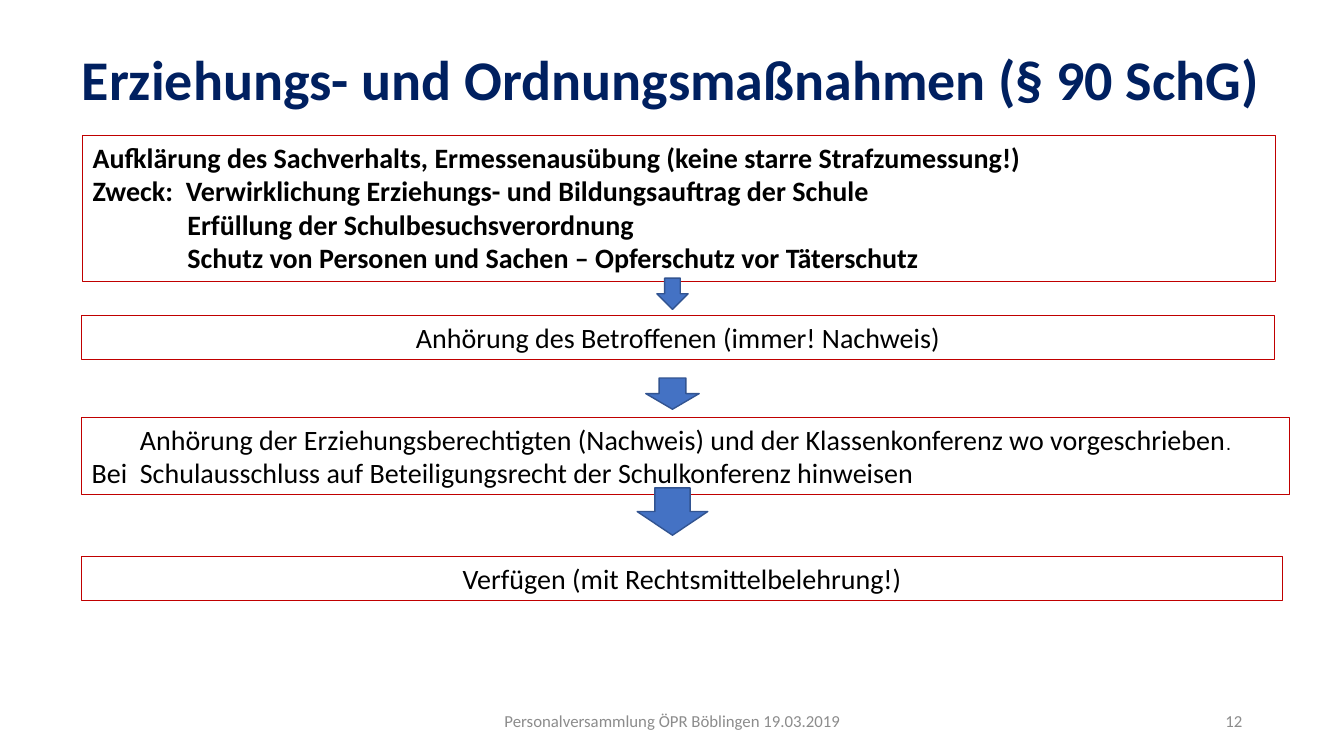
from dataclasses import dataclass

from pptx import Presentation
from pptx.dml.color import RGBColor
from pptx.enum.shapes import MSO_SHAPE
from pptx.enum.text import MSO_ANCHOR, PP_ALIGN
from pptx.slide import Slide
from pptx.util import Inches, Pt

NAVY, RED, BLACK, GRAY = "002060", "C00000", "000000", "8C8C8C"
BLUE, DARK_BLUE = "4472C4", "325491"
ARROW_CENTER = 6.67


@dataclass
class Run:
    text: str
    size: float = 20
    font: str = "Calibri"


@dataclass
class Line:
    runs: list[Run]
    align: PP_ALIGN = PP_ALIGN.LEFT
    indent: float = 0


@dataclass
class Step:
    left: float
    top: float
    width: float
    height: float
    lines: list[Line]
    bold: bool = False


@dataclass
class Arrow:
    top: float
    width: float
    height: float


PURPOSE_INDENT = 0.94
STEPS = [
    Step(0.82, 1.34, 11.83, 1.45, [
        Line([Run("Aufklärung des Sachverhalts, Ermessenausübung (keine starre Strafzumessung!)")]),
        Line([Run("Zweck:  Verwirklichung Erziehungs- und Bildungsauftrag der Schule")]),
        Line([Run("Erfüllung der Schulbesuchsverordnung")], indent=PURPOSE_INDENT),
        Line([Run("Schutz von Personen und Sachen – Opferschutz vor Täterschutz")],
             indent=PURPOSE_INDENT),
    ], bold=True),
    Step(0.81, 3.13, 11.83, 0.44, [
        Line([Run("Anhörung des Betroffenen (immer! Nachweis)")], PP_ALIGN.CENTER),
    ]),
    Step(0.81, 4.14, 11.98, 0.77, [
        Line([Run("Anhörung der Erziehungsberechtigten (Nachweis) und der "
                  "Klassenkonferenz wo vorgeschrieben"),
              Run(".", 14, "Arial")], PP_ALIGN.CENTER),
        Line([Run("Bei  Schulausschluss auf Beteiligungsrecht der Schulkonferenz hinweisen")]),
    ]),
    Step(0.81, 5.52, 11.91, 0.44, [
        Line([Run("Verfügen (mit Rechtsmittelbelehrung!)")], PP_ALIGN.CENTER),
    ]),
]
ARROWS = [Arrow(2.76, 0.31, 0.31), Arrow(3.75, 0.53, 0.31), Arrow(4.84, 0.7, 0.47)]


def rgb(color: str) -> RGBColor:
    return RGBColor.from_string(color)


def add_text(slide: Slide, lines: list[Line], left: float, top: float, width: float,
             height: float, *, color: str = BLACK, bold: bool = False,
             anchor: MSO_ANCHOR = MSO_ANCHOR.TOP, border: str | None = None) -> None:
    box = slide.shapes.add_textbox(Inches(left), Inches(top), Inches(width), Inches(height))
    if border:
        box.line.color.rgb = rgb(border)
        box.line.width = Pt(0.75)
    frame = box.text_frame
    frame.word_wrap = True
    frame.vertical_anchor = anchor
    for index, line in enumerate(lines):
        paragraph = frame.add_paragraph() if index else frame.paragraphs[0]
        paragraph.alignment = line.align
        if line.indent:
            paragraph._p.get_or_add_pPr().set("marL", str(Inches(line.indent)))
        for part in line.runs:
            run = paragraph.add_run()
            run.text = part.text
            run.font.name = part.font
            run.font.size = Pt(part.size)
            run.font.bold = bold
            run.font.color.rgb = rgb(color)


def add_step(slide: Slide, step: Step) -> None:
    add_text(slide, step.lines, step.left, step.top, step.width, step.height,
             bold=step.bold, border=RED)


def add_arrow(slide: Slide, arrow: Arrow) -> None:
    shape = slide.shapes.add_shape(
        MSO_SHAPE.DOWN_ARROW, Inches(ARROW_CENTER - arrow.width / 2), Inches(arrow.top),
        Inches(arrow.width), Inches(arrow.height))
    shape.shadow.inherit = False
    shape.fill.solid()
    shape.fill.fore_color.rgb = rgb(BLUE)
    shape.line.color.rgb = rgb(DARK_BLUE)
    shape.line.width = Pt(1)


def main() -> None:
    deck = Presentation()
    deck.slide_width, deck.slide_height = Inches(13.33), Inches(7.5)
    slide = deck.slides.add_slide(deck.slide_layouts[6])

    title = Run("Erziehungs- und Ordnungsmaßnahmen (§ 90 SchG)", 40)
    add_text(slide, [Line([title], PP_ALIGN.CENTER)], 0.66, 0.39, 11.98, 0.77,
             color=NAVY, bold=True)
    for step in STEPS:
        add_step(slide, step)
    for arrow in ARROWS:
        add_arrow(slide, arrow)

    page_number = Line([Run("12", 12)], PP_ALIGN.RIGHT)
    footer = Line([Run("Personalversammlung ÖPR Böblingen 19.03.2019", 12)], PP_ALIGN.CENTER)
    for line, left, width in ((page_number, 9.42, 3), (footer, 4.42, 4.5)):
        add_text(slide, [line], left, 6.95, width, 0.4, color=GRAY, anchor=MSO_ANCHOR.MIDDLE)

    deck.save("out.pptx")


if __name__ == "__main__":
    main()
